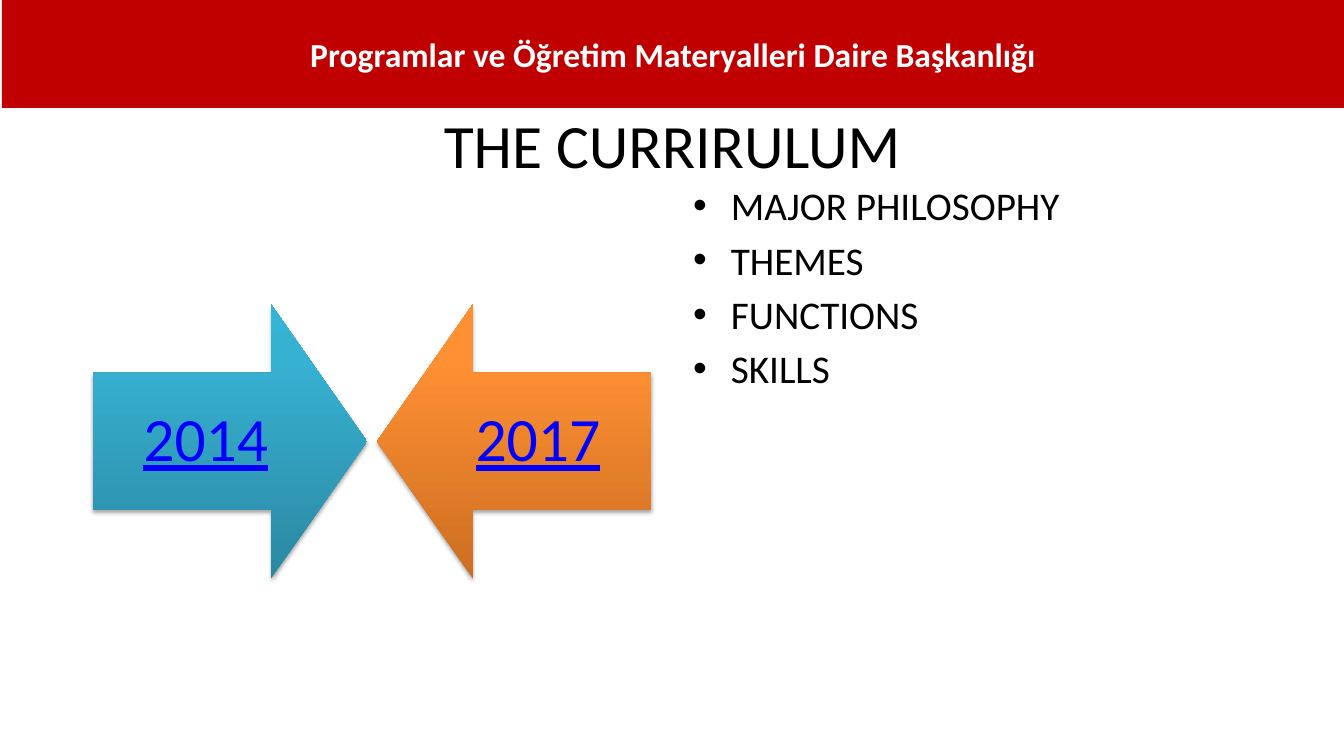
import copy
from dataclasses import dataclass

import pptx
import pptx.dml.color
import pptx.enum.shapes
import pptx.enum.text
import pptx.oxml
import pptx.oxml.ns
import pptx.util
from pptx.util import Cm

FONT = "Calibri"
PP_ALIGN = pptx.enum.text.PP_ALIGN
MIDDLE = pptx.enum.text.MSO_ANCHOR.MIDDLE
SHAPES = pptx.enum.shapes.MSO_SHAPE

ARROW_SIZE = 6.91
ARROW_GAP = 0.25
ARROWS_LEFT = 2.34
ARROWS_TOP = 7.67
THEMES = ["MAJOR PHILOSOPHY", "THEMES", "FUNCTIONS", "SKILLS"]


@dataclass
class YearArrow:
    year: str
    outline: pptx.enum.shapes.MSO_SHAPE
    gradient: tuple[str, str, str]


YEAR_ARROWS = [
    YearArrow("2014", SHAPES.RIGHT_ARROW, ("2A88A2", "37B1D2", "34B4D6")),
    YearArrow("2017", SHAPES.LEFT_ARROW, ("CC6E20", "FF9034", "FF9136")),
]


def rgb(hex_color: str) -> pptx.dml.color.RGBColor:
    return pptx.dml.color.RGBColor.from_string(hex_color)


def format_paragraph(paragraph, size: float, color: str, align=PP_ALIGN.CENTER,
                     bold: bool = False, underline: bool = False) -> None:
    paragraph.alignment = align
    for run in paragraph.runs:
        run.font.name = FONT
        run.font.size = pptx.util.Pt(size)
        run.font.color.rgb = rgb(color)
        run.font.bold = bold
        run.font.underline = underline


def fill_upwards(shape, colors: tuple[str, str, str]) -> None:
    """Fill with a three-stop gradient running from bottom to top."""
    shape.fill.gradient()
    shape.fill.gradient_angle = 90
    stop_list = shape.element.spPr.find(".//" + pptx.oxml.ns.qn("a:gsLst"))
    stop_list.append(copy.deepcopy(stop_list[-1]))
    for stop, position, color in zip(shape.fill.gradient_stops, (0, 0.8, 1), colors):
        stop.position = position
        stop.color.rgb = rgb(color)


def add_soft_shadow(shape) -> None:
    shape.shadow.inherit = False
    effects = shape.element.spPr.find(pptx.oxml.ns.qn("a:effectLst"))
    effects.append(pptx.oxml.parse_xml(
        f'<a:outerShdw {pptx.oxml.ns.nsdecls("a")} blurRad="40000" dist="23000" '
        'dir="5400000" rotWithShape="0"><a:srgbClr val="000000">'
        '<a:alpha val="35000"/></a:srgbClr></a:outerShdw>'))


def add_year_arrow(slide, arrow: YearArrow, left: float) -> None:
    shape = slide.shapes.add_shape(arrow.outline, Cm(left), Cm(ARROWS_TOP),
                                   Cm(ARROW_SIZE), Cm(ARROW_SIZE))
    shape.adjustments[0] = 0.5
    shape.adjustments[1] = 0.35
    fill_upwards(shape, arrow.gradient)
    shape.line.fill.background()
    add_soft_shadow(shape)
    frame = shape.text_frame
    frame.text = arrow.year
    frame.vertical_anchor = MIDDLE
    frame.margin_left = frame.margin_right = Cm(0.86)
    frame.margin_top = frame.margin_bottom = Cm(0.86)
    frame.paragraphs[0].line_spacing = 0.9
    format_paragraph(frame.paragraphs[0], 44, "0000FF", underline=True)


def add_title(slide) -> None:
    title = slide.shapes.title
    title.left, title.top, title.width, title.height = Cm(2.34), Cm(1.78), Cm(29.21), Cm(3.68)
    title.text_frame.text = "THE CURRIRULUM"
    title.text_frame.auto_size = pptx.enum.text.MSO_AUTO_SIZE.NONE
    title.text_frame.vertical_anchor = MIDDLE
    format_paragraph(title.text_frame.paragraphs[0], 44, "000000")


def add_themes(slide) -> None:
    themes = slide.shapes.add_textbox(Cm(17.22), Cm(4.45), Cm(14.96), Cm(12.57))
    frame = themes.text_frame
    frame.word_wrap = True
    frame.text = "\n".join(THEMES)
    for index, paragraph in enumerate(frame.paragraphs):
        properties = paragraph._p.get_or_add_pPr()
        properties.set("marL", str(Cm(0.95)))
        properties.set("indent", str(-Cm(0.95)))
        for tag in (f'buFont {pptx.oxml.ns.nsdecls("a")} typeface="Arial"',
                    f'buChar {pptx.oxml.ns.nsdecls("a")} char="•"'):
            properties.append(pptx.oxml.parse_xml(f"<a:{tag}/>"))
        if index:
            paragraph.space_before = pptx.util.Pt(5.2)
        format_paragraph(paragraph, 28, "000000", PP_ALIGN.LEFT)


def add_department_banner(slide) -> None:
    banner = slide.shapes.add_shape(SHAPES.RECTANGLE, Cm(0.05), Cm(0), Cm(33.82), Cm(2.72))
    banner.shadow.inherit = False
    banner.fill.solid()
    banner.fill.fore_color.rgb = rgb("C00000")
    banner.line.fill.background()
    banner.text_frame.text = "Programlar ve Öğretim Materyalleri Daire Başkanlığı"
    banner.text_frame.vertical_anchor = MIDDLE
    format_paragraph(banner.text_frame.paragraphs[0], 24, "FFFFFF", bold=True)


def main() -> None:
    presentation = pptx.Presentation()
    presentation.slide_width = Cm(33.87)
    presentation.slide_height = Cm(19.05)
    slide = presentation.slides.add_slide(presentation.slide_layouts[5])
    add_title(slide)
    for index, arrow in enumerate(YEAR_ARROWS):
        add_year_arrow(slide, arrow, ARROWS_LEFT + index * (ARROW_SIZE + ARROW_GAP))
    add_themes(slide)
    add_department_banner(slide)
    presentation.save("out.pptx")


if __name__ == "__main__":
    main()
